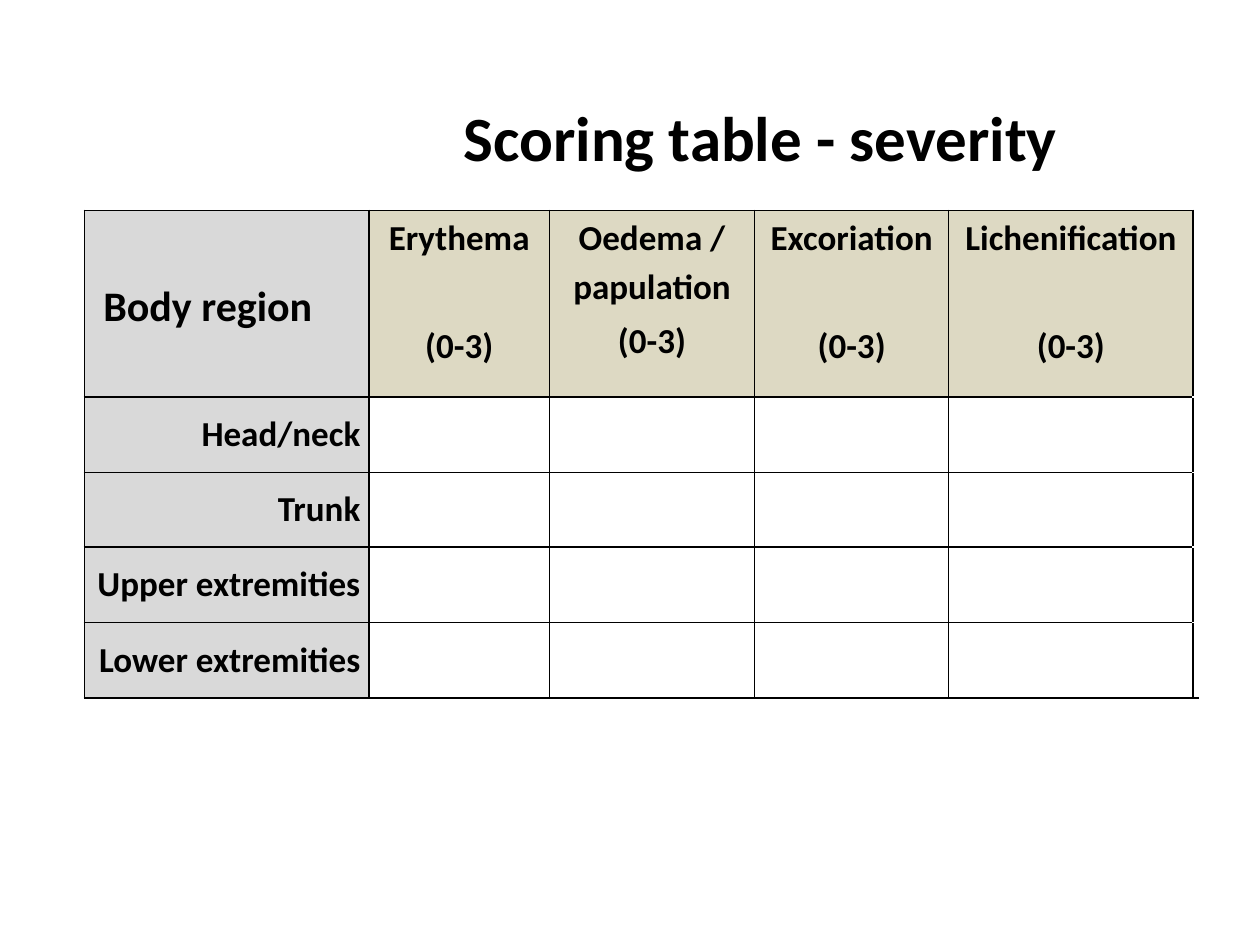
from dataclasses import dataclass
from lxml.etree import SubElement
from pptx import Presentation
from pptx.dml.color import RGBColor
from pptx.enum.text import MSO_ANCHOR, PP_ALIGN
from pptx.oxml.ns import qn
from pptx.util import Inches, Pt

TITLE = "Scoring table - severity"
CORNER = "Body region"
RANGE = "(0-3)"
SIGNS = ["Erythema", "Oedema / papulation", "Excoriation", "Lichenification"]
REGIONS = ["Head/neck", "Trunk", "Upper extremities", "Lower extremities"]
TWO_LINE_SIGN = "Oedema / papulation"

COLUMN_WIDTHS = [2.26, 1.43, 1.63, 1.54, 1.94, 0.03]
ROW_HEIGHTS = [1.48, 0.6, 0.59, 0.6, 0.6]


@dataclass(frozen=True)
class Theme:
    font: str = "Calibri"
    ink: str = "000000"
    region_fill: str = "D9D9D9"
    sign_fill: str = "DDD9C3"
    title_size: int = 36
    corner_size: int = 24
    cell_size: int = 20
    border: int = 1
    side_margin: float = 0.07
    corner_margin: float = 0.15


THEME = Theme()


def style(paragraph, size, align):
    paragraph.alignment = align
    font = paragraph.font
    font.name = THEME.font
    font.size = Pt(size)
    font.bold = True
    font.color.rgb = RGBColor.from_string(THEME.ink)


def draw_borders(cell, sides):
    properties = cell._tc.get_or_add_tcPr()
    for side in sides:
        line = SubElement(properties, qn(f"a:ln{side}"), w=str(Pt(THEME.border)))
        fill = SubElement(line, qn("a:solidFill"))
        SubElement(fill, qn("a:srgbClr"), val=THEME.ink)


def fill_cell(cell, lines, color, size, align, anchor, line_spacing=1.0):
    cell.fill.solid()
    cell.fill.fore_color.rgb = RGBColor.from_string(color)
    cell.vertical_anchor = anchor
    cell.text = "\n".join(lines)
    for paragraph in cell.text_frame.paragraphs:
        style(paragraph, size, align)
        paragraph.line_spacing = line_spacing


def add_title(slide):
    title = slide.shapes.title
    title.left, title.top = Inches(3.58), Inches(0.73)
    title.width, title.height = Inches(4.96), Inches(0.71)
    frame = title.text_frame
    frame.text = TITLE
    frame.word_wrap = False
    frame.vertical_anchor = MSO_ANCHOR.MIDDLE
    style(frame.paragraphs[0], THEME.title_size, PP_ALIGN.LEFT)


def add_scoring_table(slide):
    table = slide.shapes.add_table(
        len(ROW_HEIGHTS), len(COLUMN_WIDTHS), Inches(0.67), Inches(1.67),
        Inches(sum(COLUMN_WIDTHS)), Inches(sum(ROW_HEIGHTS))).table
    table.first_row = table.horz_banding = False
    for column, width in zip(table.columns, COLUMN_WIDTHS):
        column.width = Inches(width)
    for row, height in zip(table.rows, ROW_HEIGHTS):
        row.height = Inches(height)

    last_row, edge = len(ROW_HEIGHTS) - 1, len(COLUMN_WIDTHS) - 1
    for r, row in enumerate(table.rows):
        for c, cell in enumerate(row.cells):
            edge_sides = "LB" if r == last_row else "L"
            draw_borders(cell, edge_sides if c == edge else "LRTB")
            cell.fill.background()
            cell.margin_left = cell.margin_right = Inches(0 if c == edge else THEME.side_margin)
            cell.margin_top = cell.margin_bottom = 0

    corner = table.cell(0, 0)
    fill_cell(corner, [CORNER], THEME.region_fill, THEME.corner_size,
              PP_ALIGN.LEFT, MSO_ANCHOR.MIDDLE, 1.15)
    corner.margin_left = Inches(THEME.corner_margin)
    for c, sign in enumerate(SIGNS, 1):
        cell = table.cell(0, c)
        fill_cell(cell, [sign, RANGE], THEME.sign_fill, THEME.cell_size,
                  PP_ALIGN.CENTER, MSO_ANCHOR.TOP, 1.15)
        gap = 3 if sign == TWO_LINE_SIGN else 34
        cell.text_frame.paragraphs[1].space_before = Pt(gap)
    for r, region in enumerate(REGIONS, 1):
        fill_cell(table.cell(r, 0), [region], THEME.region_fill, THEME.cell_size,
                  PP_ALIGN.RIGHT, MSO_ANCHOR.MIDDLE)


def main():
    presentation = Presentation()
    presentation.slide_width, presentation.slide_height = Inches(10), Inches(7.5)
    slide = presentation.slides.add_slide(presentation.slide_layouts[5])
    add_title(slide)
    add_scoring_table(slide)
    presentation.save("out.pptx")


if __name__ == "__main__":
    main()
